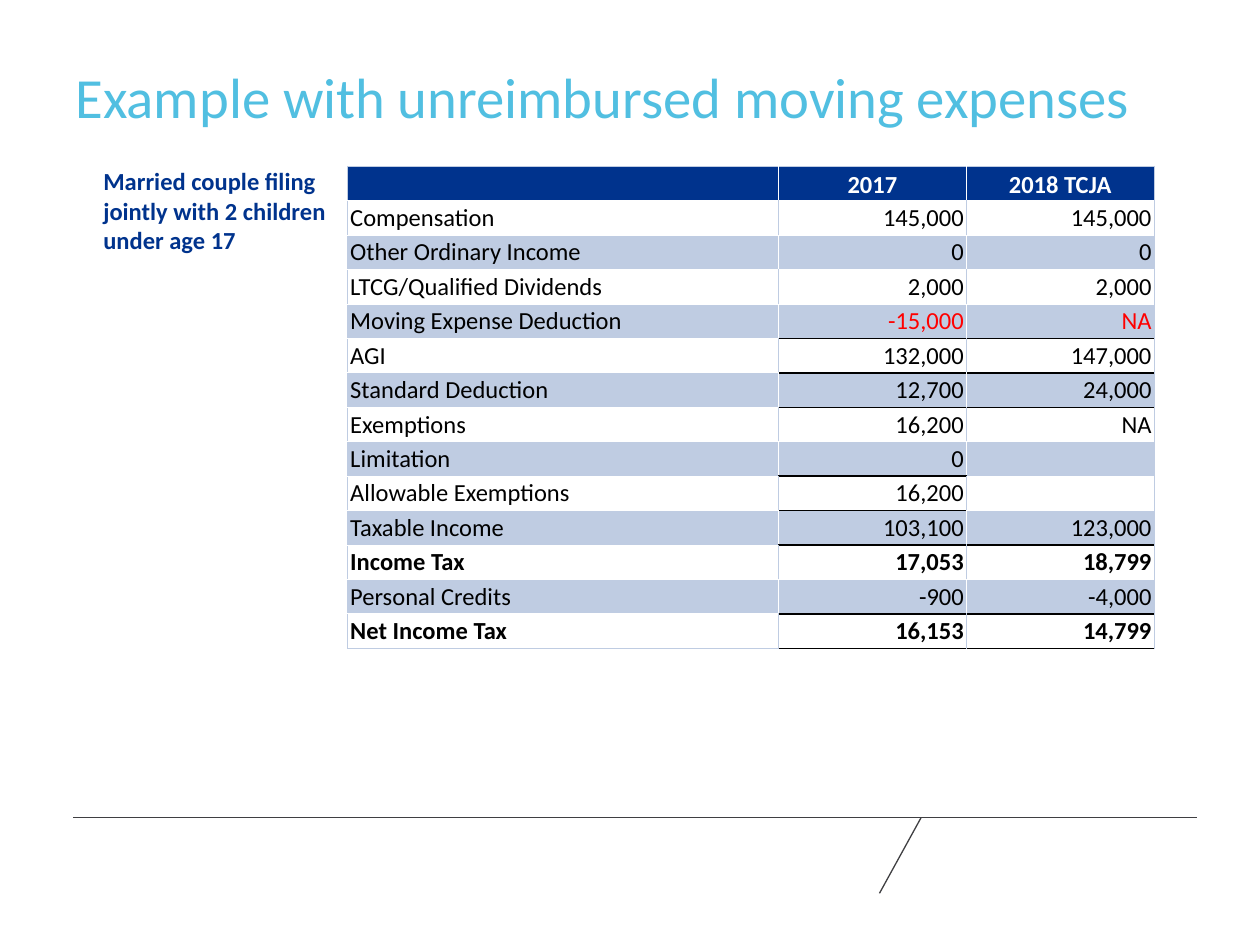
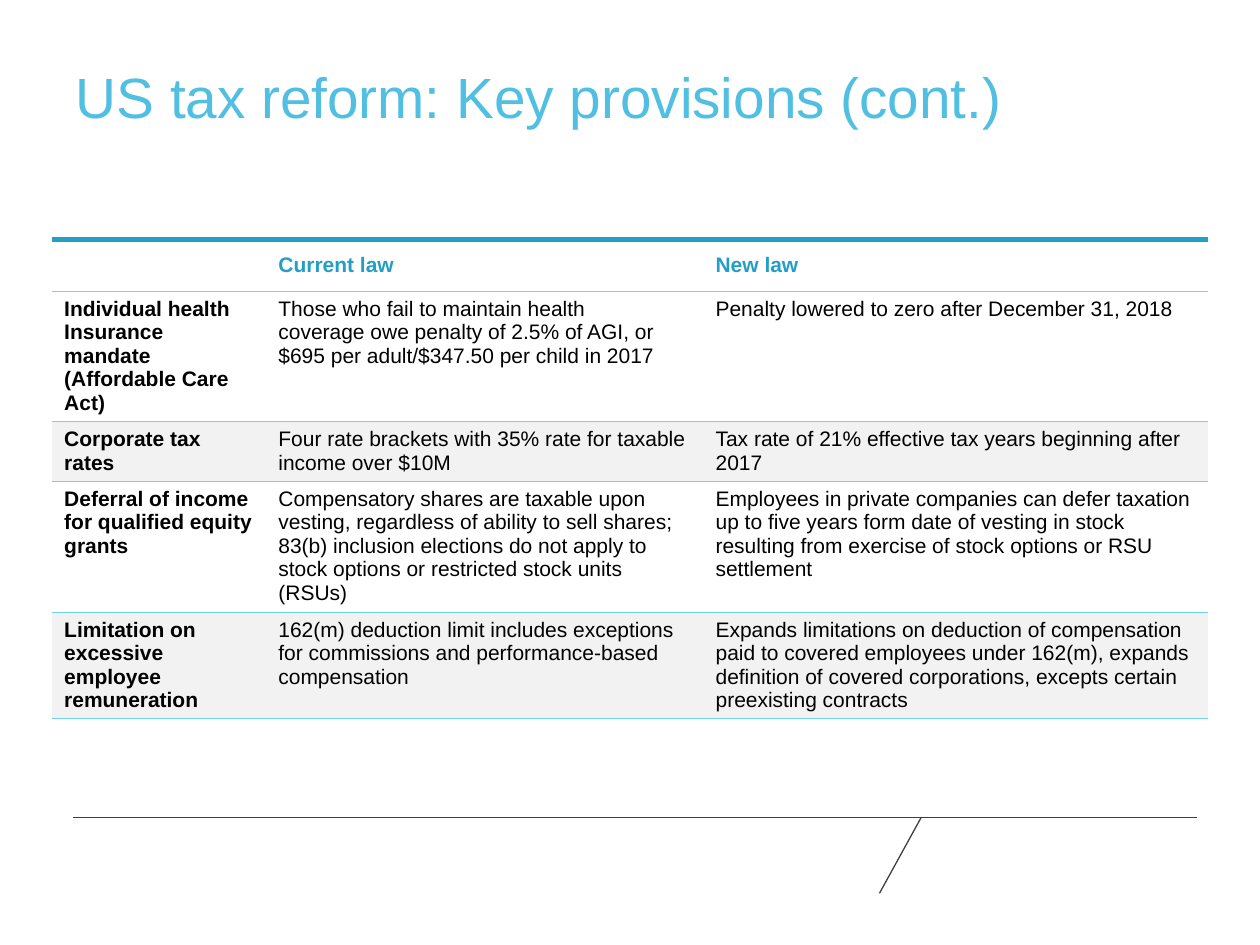
import pptx
import pptx.util
import pptx.dml.color
import pptx.enum.shapes
import pptx.enum.text
import pptx.oxml.ns
from lxml import etree

Inches = pptx.util.Inches
Align = pptx.enum.text.PP_ALIGN
Anchor = pptx.enum.text.MSO_ANCHOR

SKY, NAVY, PALE_BLUE, TEAL, AQUA = "51BFE1", "00338D", "BFCCE2", "239FC7", "71D4E8"
WHITE, BLACK, RED, LIGHT_GRAY, DARK_GRAY = "FFFFFF", "000000", "FF0000", "F2F2F2", "3F3F42"

FOOTER_LINES = [(0.58, 6.49, 9.5, 6.49), (6.98, 7.09, 7.31, 6.49)]

EXAMPLE_TITLE = "Example with unreimbursed moving expenses"
FAMILY = "Married couple filing jointly with 2 children under age 17"
EXAMPLE_COLUMNS = [3.42, 1.49, 1.49]
EXAMPLE_HEIGHT = 3.83
EXAMPLE_ROWS = [
    ("", "2017", "2018 TCJA"),
    ("Compensation", "145,000", "145,000"),
    ("Other Ordinary Income", "0", "0"),
    ("LTCG/Qualified Dividends", "2,000", "2,000"),
    ("Moving Expense Deduction", "-15,000", "NA"),
    ("AGI", "132,000", "147,000"),
    ("Standard Deduction", "12,700", "24,000"),
    ("Exemptions", "16,200", "NA"),
    ("Limitation", "0", ""),
    ("Allowable Exemptions", "16,200", ""),
    ("Taxable Income", "103,100", "123,000"),
    ("Income Tax", "17,053", "18,799"),
    ("Personal Credits", "-900", "-4,000"),
    ("Net Income Tax", "16,153", "14,799"),
]
UNDERLINED_ROWS = {0: [], 1: [4, 5, 6, 8, 9, 10, 12, 13], 2: [4, 5, 6, 10, 12, 13]}
RED_ROW = 4
BOLD_ROWS = [0, 11, 13]

PROVISIONS_TITLE = "US tax reform: Key provisions (cont.)"
PROVISION_COLUMNS = [1.7, 3.47, 4.01]
PROVISION_HEIGHTS = [0.41, 1.03, 0.47, 1.04, 0.84]
PROVISION_ROWS = [
    ("", "Current law", "New law"),
    ("Individual health\nInsurance mandate (Affordable Care Act)",
     "Those who fail to maintain health\ncoverage owe penalty of 2.5% of AGI, or "
     "$695 per adult/$347.50 per child in 2017",
     "Penalty lowered to zero after December 31, 2018"),
    ("Corporate tax rates",
     "Four rate brackets with 35% rate for taxable income over $10M",
     "Tax rate of 21% effective tax years beginning after 2017"),
    ("Deferral of income for qualified equity grants",
     "Compensatory shares are taxable upon vesting, regardless of ability to sell shares; "
     "83(b) inclusion elections do not apply to stock options or restricted stock units (RSUs)",
     "Employees in private companies can defer taxation up to five years form date of vesting "
     "in stock resulting from exercise of stock options or RSU settlement"),
    ("Limitation on excessive employee remuneration",
     "162(m) deduction limit includes exceptions for commissions and performance-based compensation",
     "Expands limitations on deduction of compensation paid to covered employees under 162(m), "
     "expands definition of covered corporations, excepts certain preexisting contracts"),
]


def color(value):
    return pptx.dml.color.RGBColor.from_string(value)


def write(frame, text, size=12, font="Arial", fill=BLACK, bold=False,
          align=Align.LEFT, after=None, line_spacing=None):
    for index, line in enumerate(text.split("\n")):
        paragraph = frame.paragraphs[0] if index == 0 else frame.add_paragraph()
        paragraph.alignment = align
        if after is not None:
            paragraph.space_after = pptx.util.Pt(after)
        if line_spacing:
            paragraph.line_spacing = line_spacing
        if not line:
            etree.SubElement(paragraph._p, pptx.oxml.ns.qn("a:endParaRPr"), sz=str(size * 100))
            continue
        run = paragraph.add_run()
        run.text = line
        run.font.size = pptx.util.Pt(size)
        run.font.name = font
        run.font.bold = bold
        run.font.color.rgb = color(fill)


def set_margins(target, left, top, right, bottom):
    target.margin_left, target.margin_top = Inches(left), Inches(top)
    target.margin_right, target.margin_bottom = Inches(right), Inches(bottom)


def set_borders(cell, **sides):
    properties = cell._tc.get_or_add_tcPr()
    for position, side in enumerate("LRTB"):
        border = sides.get(side)
        line = etree.Element(pptx.oxml.ns.qn(f"a:ln{side}"))
        if border:
            line.set("w", str(pptx.util.Pt(border[1])))
            fill = etree.SubElement(line, pptx.oxml.ns.qn("a:solidFill"))
            etree.SubElement(fill, pptx.oxml.ns.qn("a:srgbClr"), val=border[0])
        else:
            line.set("w", "0")
            etree.SubElement(line, pptx.oxml.ns.qn("a:noFill"))
        properties.insert(position, line)


def fill_cell(cell, value):
    cell.fill.solid()
    cell.fill.fore_color.rgb = color(value)


def add_table(slide, left, top, columns, heights):
    table = slide.shapes.add_table(len(heights), len(columns), Inches(left), Inches(top),
                                   Inches(sum(columns)), Inches(sum(heights))).table
    table.horz_banding = False
    for column, width in zip(table.columns, columns):
        column.width = Inches(width)
    for row, height in zip(table.rows, heights):
        row.height = Inches(height)
    return table


def add_slide(presentation, text, width, font):
    slide = presentation.slides.add_slide(presentation.slide_layouts[5])
    for x1, y1, x2, y2 in FOOTER_LINES:
        line = slide.shapes.add_connector(pptx.enum.shapes.MSO_CONNECTOR.STRAIGHT,
                                          Inches(x1), Inches(y1), Inches(x2), Inches(y2))
        line.line.color.rgb = color(DARK_GRAY)
        line.line.width = pptx.util.Pt(0.75)
        etree.SubElement(line._element.spPr, pptx.oxml.ns.qn("a:effectLst"))
    title = slide.shapes.title
    title.left, title.top = Inches(0.5), Inches(0.5)
    title.width, title.height = Inches(width), Inches(1.16)
    frame = title.text_frame
    frame.auto_size = pptx.enum.text.MSO_AUTO_SIZE.NONE
    frame.vertical_anchor = Anchor.TOP
    write(frame, text, size=32.4, font=font, fill=SKY, line_spacing=0.9)
    return slide


def example_borders(row, column):
    last_row, last_column = len(EXAMPLE_ROWS) - 1, len(EXAMPLE_COLUMNS) - 1
    underlined = UNDERLINED_ROWS[column]
    outer, inner, rule = (PALE_BLUE, 0.5), (WHITE, 0.5), (BLACK, 1)
    between = inner if row % 2 == 0 else outer
    top = outer if row == 0 else rule if row - 1 in underlined else inner
    bottom = rule if row in underlined else outer if row == last_row else inner
    return {"L": outer if column == 0 else between,
            "R": outer if column == last_column else between,
            "T": top, "B": bottom}


def add_example(presentation):
    slide = add_slide(presentation, EXAMPLE_TITLE, 9.08, "Calibri")
    label = slide.shapes.add_textbox(Inches(0.82), Inches(1.32), Inches(1.94), Inches(0.71))
    label.text_frame.word_wrap = True
    set_margins(label.text_frame, 0, 0, 0, 0)
    write(label.text_frame, FAMILY, size=14, font="Calibri", fill=NAVY, bold=True, after=6)

    count = len(EXAMPLE_ROWS)
    table = add_table(slide, 2.76, 1.32, EXAMPLE_COLUMNS, [EXAMPLE_HEIGHT / count] * count)
    for row, values in enumerate(EXAMPLE_ROWS):
        header = row == 0
        for column, value in enumerate(values):
            cell = table.cell(row, column)
            set_margins(cell, 0.02, 0.02, 0.02, 0.01)
            cell.vertical_anchor = Anchor.BOTTOM if header else Anchor.TOP
            fill_cell(cell, NAVY if header else WHITE if row % 2 else PALE_BLUE)
            set_borders(cell, **example_borders(row, column))
            red = row == RED_ROW and column > 0
            write(cell.text_frame, value, size=14, font="Calibri", bold=row in BOLD_ROWS, after=6,
                  fill=WHITE if header else RED if red else BLACK,
                  align=Align.CENTER if header else Align.RIGHT if column else Align.LEFT)


def add_provisions(presentation):
    slide = add_slide(presentation, PROVISIONS_TITLE, 8.33, "Arial")
    table = add_table(slide, 0.41, 1.9, PROVISION_COLUMNS, PROVISION_HEIGHTS)
    thin, thick = (AQUA, 0.5), (TEAL, 3)
    for row, values in enumerate(PROVISION_ROWS):
        header = row == 0
        for column, value in enumerate(values):
            cell = table.cell(row, column)
            cell.vertical_anchor = Anchor.MIDDLE if header else Anchor.TOP
            fill_cell(cell, LIGHT_GRAY if row and row % 2 == 0 else WHITE)
            set_borders(cell, T=thick if header else thin, B=thin)
            write(cell.text_frame, value, bold=header or column == 0,
                  fill=TEAL if header else BLACK)


def main():
    presentation = pptx.Presentation()
    presentation.slide_width, presentation.slide_height = Inches(10), Inches(7.5)
    add_example(presentation)
    add_provisions(presentation)
    presentation.save("out.pptx")


if __name__ == "__main__":
    main()
